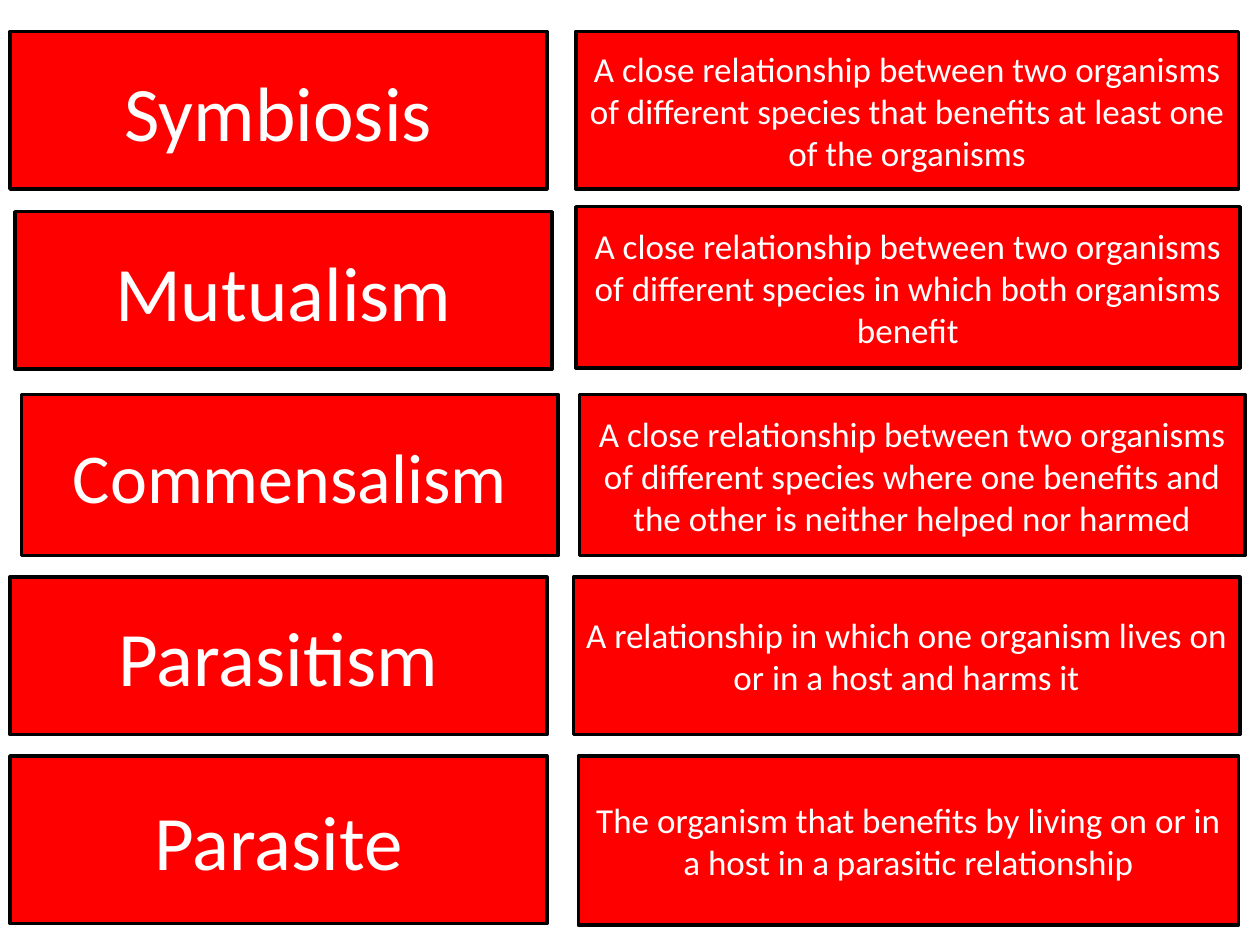
import pptx
import pptx.dml.color
import pptx.enum.shapes
import pptx.enum.text
import pptx.util

RED = pptx.dml.color.RGBColor(0xFF, 0x00, 0x00)
BLACK = pptx.dml.color.RGBColor(0x00, 0x00, 0x00)
WHITE = pptx.dml.color.RGBColor(0xFF, 0xFF, 0xFF)

COLUMNS, ROWS = 100, 75
TERM_WIDTH = 42.6
DEFINITION_SIZE = 20

# Each card: (text, size, left, top, width, height) in grid units.
CARDS = [
    ("Symbiosis", 44, 0.8, 2.5, TERM_WIDTH, 12.5),
    ("A close relationship between two organisms of different species "
     "that benefits at least one of the organisms",
     DEFINITION_SIZE, 45.7, 2.5, 52.6, 12.5),
    ("Mutualism", 44, 1.2, 16.8, TERM_WIDTH, 12.5),
    ("A close relationship between two organisms of different species "
     "in which both organisms benefit",
     DEFINITION_SIZE, 45.7, 16.4, 52.7, 12.8),
    ("Commensalism", 40, 1.7, 31.3, TERM_WIDTH, 12.8),
    ("A close relationship between two organisms of different species "
     "where one benefits and the other is neither helped nor harmed",
     DEFINITION_SIZE, 46, 31.3, 52.8, 12.8),
    ("Parasitism", 44, 0.8, 45.8, TERM_WIDTH, 12.5),
    ("A relationship in which one organism lives on or in a host and harms it",
     DEFINITION_SIZE, 45.5, 45.8, 52.9, 12.5),
    ("Parasite", 44, 0.8, 60, TERM_WIDTH, 13.3),
    ("The organism that benefits by living on or in a host "
     "in a parasitic relationship",
     DEFINITION_SIZE, 45.9, 60, 52.4, 13.4),
]


class CardSlide:
    """Hold the card style and the slide that cards are placed on."""

    font_name = "Calibri"
    line_width = pptx.util.Pt(2)

    def __init__(self, presentation):
        self.slide = presentation.slides.add_slide(presentation.slide_layouts[6])
        self.column = presentation.slide_width / COLUMNS
        self.row = presentation.slide_height / ROWS

    def add_card(self, text, size, left, top, width, height):
        shape = self.slide.shapes.add_shape(
            pptx.enum.shapes.MSO_SHAPE.FLOWCHART_PROCESS,
            round(left * self.column), round(top * self.row),
            round(width * self.column), round(height * self.row))
        shape.shadow.inherit = False
        shape.fill.solid()
        shape.fill.fore_color.rgb = RED
        shape.line.color.rgb = BLACK
        shape.line.width = self.line_width
        frame = shape.text_frame
        frame.word_wrap = True
        frame.vertical_anchor = pptx.enum.text.MSO_ANCHOR.MIDDLE
        paragraph = frame.paragraphs[0]
        paragraph.alignment = pptx.enum.text.PP_ALIGN.CENTER
        run = paragraph.add_run()
        run.text = text
        run.font.name = self.font_name
        run.font.size = pptx.util.Pt(size)
        run.font.color.rgb = WHITE


def main():
    presentation = pptx.Presentation()
    presentation.slide_width = pptx.util.Inches(10)
    presentation.slide_height = pptx.util.Inches(7.5)
    card_slide = CardSlide(presentation)
    for card in CARDS:
        card_slide.add_card(*card)
    presentation.save("out.pptx")


if __name__ == "__main__":
    main()
